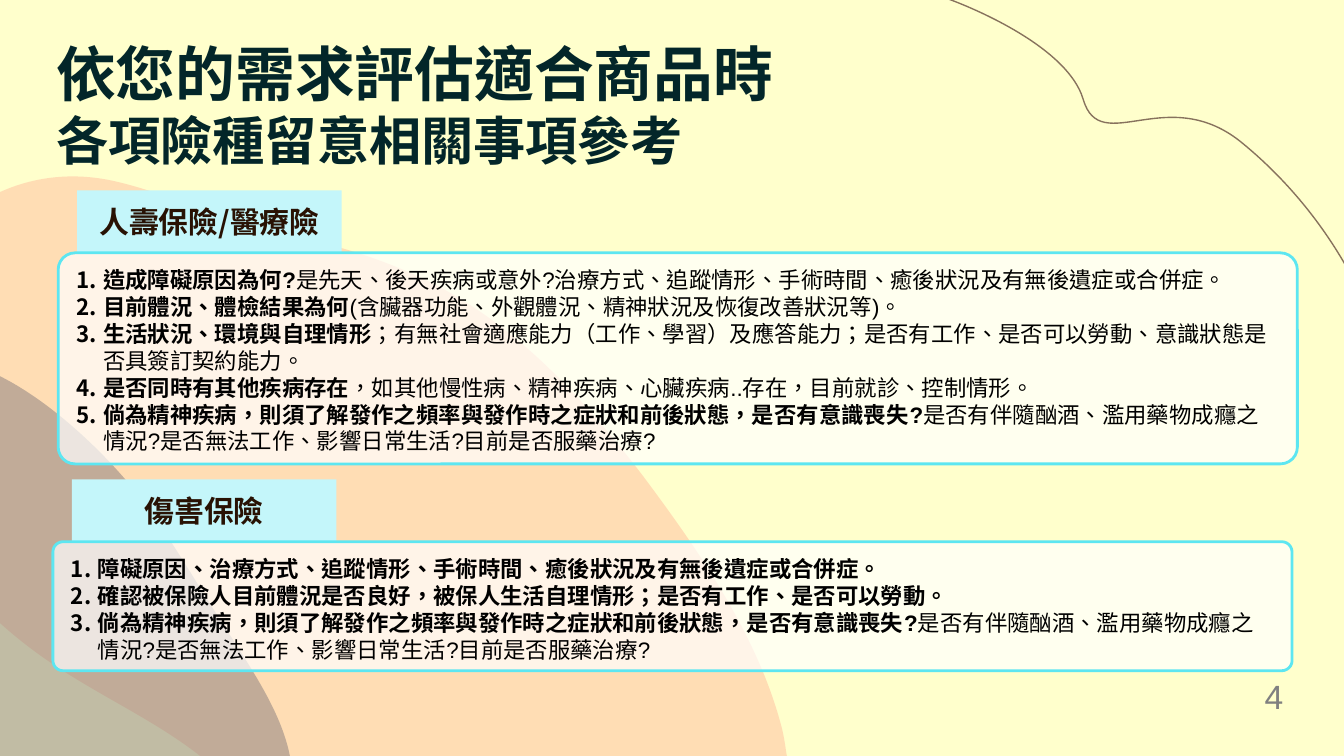
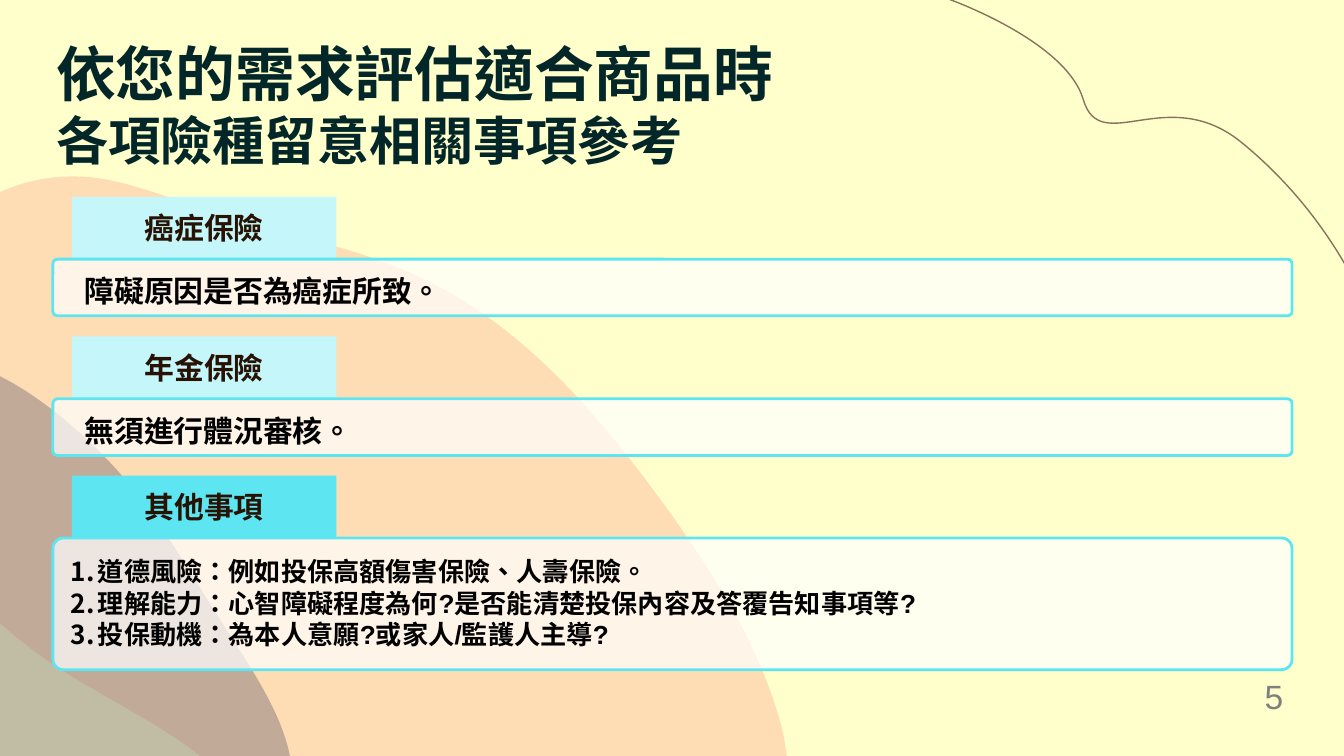
"""Build two slides on points to check for each type of insurance."""
from lxml.etree import SubElement
from pptx import Presentation
from pptx.dml.color import RGBColor
from pptx.enum.lang import MSO_LANGUAGE_ID as Language
from pptx.enum.shapes import MSO_SHAPE as Shape
from pptx.enum.text import MSO_ANCHOR as Anchor, MSO_AUTO_SIZE as AutoSize, PP_ALIGN as Align
from pptx.oxml.ns import qn
from pptx.util import Cm, Pt

CREAM = RGBColor(0xFF, 0xFF, 0xCC)
PEACH = RGBColor(0xFF, 0xCA, 0xA8)
TAUPE = RGBColor(0x84, 0x7B, 0x7D)
BROWN = RGBColor(0x87, 0x72, 0x5D)
DARK_TEAL = RGBColor(0x03, 0x26, 0x29)
DARK_BROWN = RGBColor(0x28, 0x12, 0x04)
PALE_CYAN = RGBColor(0xC4, 0xF6, 0xFA)
CYAN = RGBColor(0x5D, 0xE6, 0xF1)
GRAY = RGBColor(0x80, 0x80, 0x80)
BLACK = RGBColor(0, 0, 0)
WHITE = RGBColor(0xFF, 0xFF, 0xFF)

BODY_FONT = "Arial"
CJK_FONT = "Noto Sans CJK SC"
TITLE_LINES = [("依您的需求評估適合商品時", 32), ("各項險種留意相關事項參考", 28)]
PANEL_WIDTH = 23.42
CURVE_UNIT = Cm(2.54)

PEACH_BLOB = [
    (-0.83, 3.37),
    (-0.75, 3.67, -0.6, 3.95, -0.41, 4.2), (-0.18, 4.49, 0.09, 4.74, 0.39, 4.94),
    (0.79, 5.21, 1.24, 5.4, 1.59, 5.71), (2.17, 6.22, 2.46, 6.98, 3.1, 7.43),
    (3.63, 7.8, 4.33, 7.8, 4.85, 7.42), (4.98, 7.38, 5.09, 7.32, 5.2, 7.26),
    (5.77, 6.9, 5.97, 6.25, 5.85, 5.6), (5.84, 5.53, 5.83, 5.46, 5.81, 5.39),
    (5.63, 4.72, 5.2, 4.1, 4.79, 3.55), (4.34, 2.96, 3.82, 2.39, 3.14, 2.07),
    (2.82, 1.92, 2.47, 1.81, 2.12, 1.75), (1.69, 1.66, 1.29, 1.45, 0.86, 1.35),
    (0.17, 1.19, -0.45, 1.56, -0.73, 2.19), (-0.91, 2.58, -0.93, 2.99, -0.83, 3.37),
]
TAUPE_BLOB = [
    (-1.53, 3.63),
    (-1.55, 3.78, -1.51, 3.94, -1.39, 4.17), (-1.16, 4.64, -0.61, 4.65, -0.37, 5.36),
    (-0.31, 5.53, -0.22, 5.69, -0.1, 5.83), (0.15, 6.13, 0.49, 6.38, 0.9, 6.55),
    (0.93, 6.56, 0.95, 6.57, 0.98, 6.56), (1.26, 6.65, 1.56, 6.66, 1.8, 6.52),
    (2.02, 6.39, 2.13, 6.19, 2.17, 5.98), (2.18, 5.89, 2.18, 5.8, 2.17, 5.71),
    (2.13, 5.34, 1.87, 4.98, 1.65, 4.63), (1.43, 4.29, 1.23, 3.93, 0.96, 3.6),
    (0.6, 3.17, -0.39, 2.24, -0.98, 2.89), (-1.3, 3.23, -1.49, 3.42, -1.53, 3.63),
]
CORNER_LINE = [
    (7.05, -0.01),
    (7.05, -0.01, 7.93, 0.3, 8.06, 0.74), (8.19, 1.18, 8.69, 0.6, 9.25, 1.07),
    (9.59, 1.35, 9.87, 1.7, 10.07, 2.08),
]

MENTAL_ILLNESS = (
    "倘為精神疾病，則須了解發作之頻率與發作時之症狀和前後狀態，是否有意識喪失?",
    "是否有伴隨酗酒、濫用藥物成癮之情況?是否無法工作、影響日常生活?目前是否服藥治療?",
)
LIFE_ITEMS = [
    ("造成障礙原因為何?",
     "是先天、後天疾病或意外?治療方式、追蹤情形、手術時間、癒後狀況及有無後遺症或合併症。"),
    ("目前體況、體檢結果為何", "(含臟器功能、外觀體況、精神狀況及恢復改善狀況等)。"),
    ("生活狀況、環境與自理情形",
     "；有無社會適應能力（工作、學習）及應答能力；是否有工作、是否可以勞動、意識狀態是否具簽訂契約能力。"),
    ("是否同時有其他疾病存在", "，如其他慢性病、精神疾病、心臟疾病..存在，目前就診、控制情形。"),
    MENTAL_ILLNESS,
]
INJURY_ITEMS = [
    ("障礙原因、治療方式、追蹤情形、手術時間、癒後狀況及有無後遺症或合併症。",),
    ("確認被保險人目前體況是否良好，被保人生活自理情形；是否有工作、是否可以勞動。",),
    MENTAL_ILLNESS,
]
OTHER_ITEMS = [
    ("道德風險：例如投保高額傷害保險、人壽保險。",),
    ("理解能力：心智障礙程度為何?是否能清楚投保內容及答覆告知事項等?",),
    ("投保動機：為本人意願?或家人/監護人主導?",),
]


def set_font(paragraph, size, color, bold=False, name=BODY_FONT):
    """Set the font shared by all runs of a paragraph."""
    font = paragraph.font
    font.name, font.size, font.bold = name, Pt(size), bold
    font.color.rgb = color


def set_fill(shape, color, opacity=100):
    """Give a shape a plain fill of the given opacity in percent."""
    shape.shadow.inherit = False
    shape.fill.solid()
    shape.fill.fore_color.rgb = color
    if opacity < 100:
        tint = shape.element.spPr.find(qn("a:solidFill"))[0]
        SubElement(tint, qn("a:alpha"), val=str(opacity * 1000))


def add_curve(slide, curve, closed):
    """Draw an outline through the anchors and bend its sides into Bézier curves."""
    start, *segments = [[value * CURVE_UNIT for value in part] for part in curve]
    builder = slide.shapes.build_freeform(*start)
    builder.add_line_segments([part[-2:] for part in segments], close=closed)
    shape = builder.convert_to_shape()
    for side, part in zip(list(shape.element.iter(qn("a:lnTo"))), segments):
        bend = side.makeelement(qn("a:cubicBezTo"))
        for x, y in zip(part[::2], part[1::2]):
            SubElement(bend, qn("a:pt"), x=str(round(x - shape.left)), y=str(round(y - shape.top)))
        side.getparent().replace(side, bend)
    return shape


def decorate_layout(layout, slide):
    """Put the background colour, blobs and corner line on the layout."""
    layout.background.fill.solid()
    layout.background.fill.fore_color.rgb = CREAM
    for curve, color, opacity in ((PEACH_BLOB, PEACH, 64), (TAUPE_BLOB, TAUPE, 50)):
        blob = add_curve(slide, curve, True)
        set_fill(blob, color, opacity)
        blob.line.fill.background()
        layout.shapes.element.append(blob.element)
    corner = add_curve(slide, CORNER_LINE, False)
    corner.shadow.inherit = False
    corner.fill.background()
    corner.line.color.rgb = BROWN
    corner.line.width = Pt(0.75)
    layout.shapes.element.append(corner.element)


def add_title(slide):
    """Place the shared two-line title."""
    title = slide.shapes.title
    title.left, title.top, title.width, title.height = Cm(0.81), Cm(0.45), Cm(16.94), Cm(3.25)
    frame = title.text_frame
    frame.text = "\n".join(text for text, _ in TITLE_LINES)
    frame.auto_size, frame.word_wrap = AutoSize.NONE, True
    frame.vertical_anchor = Anchor.TOP
    frame.margin_left = frame.margin_right = Cm(0.25)
    frame.margin_top = frame.margin_bottom = Cm(0.25)
    for paragraph, (_, size) in zip(frame.paragraphs, TITLE_LINES):
        paragraph.alignment = Align.LEFT
        paragraph.space_before = Pt(0)
        set_font(paragraph, size, DARK_TEAL, True)


def add_text_box(slide, left, top, width, height):
    """Add a wrapping text box and return its text frame."""
    frame = slide.shapes.add_textbox(Cm(left), Cm(top), Cm(width), Cm(height)).text_frame
    frame.word_wrap = True
    return frame


def add_page_number(slide, number):
    """Write the page number at the lower right."""
    paragraph = add_text_box(slide, 23.65, 12.65, 1.75, 1.32).paragraphs[0]
    paragraph.text = str(number)
    set_font(paragraph, 18, GRAY)


def number_paragraph(paragraph):
    """Number a paragraph with a hanging indent."""
    properties = paragraph._p.get_or_add_pPr()
    properties.set("marL", str(Cm(0.51)))
    properties.set("indent", str(-Cm(0.51)))
    bullet_color = properties.makeelement(qn("a:buClr"))
    SubElement(bullet_color, qn("a:srgbClr"), val=str(BLACK))
    numbering = properties.makeelement(qn("a:buAutoNum"), type="arabicPeriod")
    defaults = properties.find(qn("a:defRPr"))
    defaults.addprevious(bullet_color)
    defaults.addprevious(numbering)


def add_label(slide, left, top, text, color):
    """Add the tab that names an insurance type."""
    label = slide.shapes.add_shape(Shape.RECTANGLE, Cm(left), Cm(top), Cm(5), Cm(1.17))
    set_fill(label, color)
    label.line.fill.background()
    label.text_frame.vertical_anchor = Anchor.MIDDLE
    paragraph = label.text_frame.paragraphs[0]
    paragraph.text = text
    paragraph.alignment = Align.CENTER
    set_font(paragraph, 16, DARK_BROWN, True, CJK_FONT)


def add_section(slide, name, items, top, height, left=1.0, size=12,
                numbered=True, text_gap=0.13, label_color=PALE_CYAN):
    """Add a label, its rounded panel and the items; each item is bold, then plain."""
    add_label(slide, left + 0.36, top - 1.18, name, label_color)
    panel = slide.shapes.add_shape(
        Shape.ROUNDED_RECTANGLE, Cm(left), Cm(top), Cm(PANEL_WIDTH), Cm(height))
    panel.adjustments[0] = 0.08
    set_fill(panel, WHITE, 70)
    panel.line.color.rgb = CYAN
    panel.line.width = Pt(1.5)
    text_left = left + (0.09 if numbered else 0.35)
    frame = add_text_box(slide, text_left, top + text_gap, 23.1, height - text_gap)
    for index, parts in enumerate(items):
        paragraph = frame.add_paragraph() if index else frame.paragraphs[0]
        set_font(paragraph, size, BLACK, True)
        for position, part in enumerate(parts):
            run = paragraph.add_run()
            run.text = part
            run.font.bold = position == 0
        if numbered:
            number_paragraph(paragraph)


def set_chinese(slide):
    """Mark the text as Traditional Chinese and name its East Asian font."""
    for shape in slide.shapes:
        for paragraph in shape.text_frame.paragraphs:
            for run in paragraph.runs:
                run.font.language_id = Language.TRADITIONAL_CHINESE
    for latin in list(slide.element.iter(qn("a:latin"))):
        latin.addnext(latin.makeelement(qn("a:ea"), typeface=CJK_FONT))


def main():
    """Build and save the two slides."""
    deck = Presentation()
    deck.slide_width, deck.slide_height = Cm(25.4), Cm(14.29)
    layout = deck.slide_layouts[5]
    health, others = (deck.slides.add_slide(layout) for _ in range(2))
    decorate_layout(layout, health)

    for number, slide in enumerate((health, others), start=4):
        add_title(slide)
        add_page_number(slide, number)

    add_section(health, "人壽保險/醫療險", LIFE_ITEMS, 4.78, 3.99, left=1.1)
    add_section(health, "傷害保險", INJURY_ITEMS, 10.24, 2.44)

    add_section(others, "癌症保險", [("障礙原因是否為癌症所致。",)], 4.9, 1.07,
                size=16, numbered=False)
    add_section(others, "年金保險", [("無須進行體況審核。",)], 7.54, 1.07,
                size=16, numbered=False)
    add_section(others, "其他事項", OTHER_ITEMS, 10.17, 2.49,
                size=14, text_gap=0.21, label_color=CYAN)

    for slide in deck.slides:
        set_chinese(slide)
    deck.save("out.pptx")


if __name__ == "__main__":
    main()
